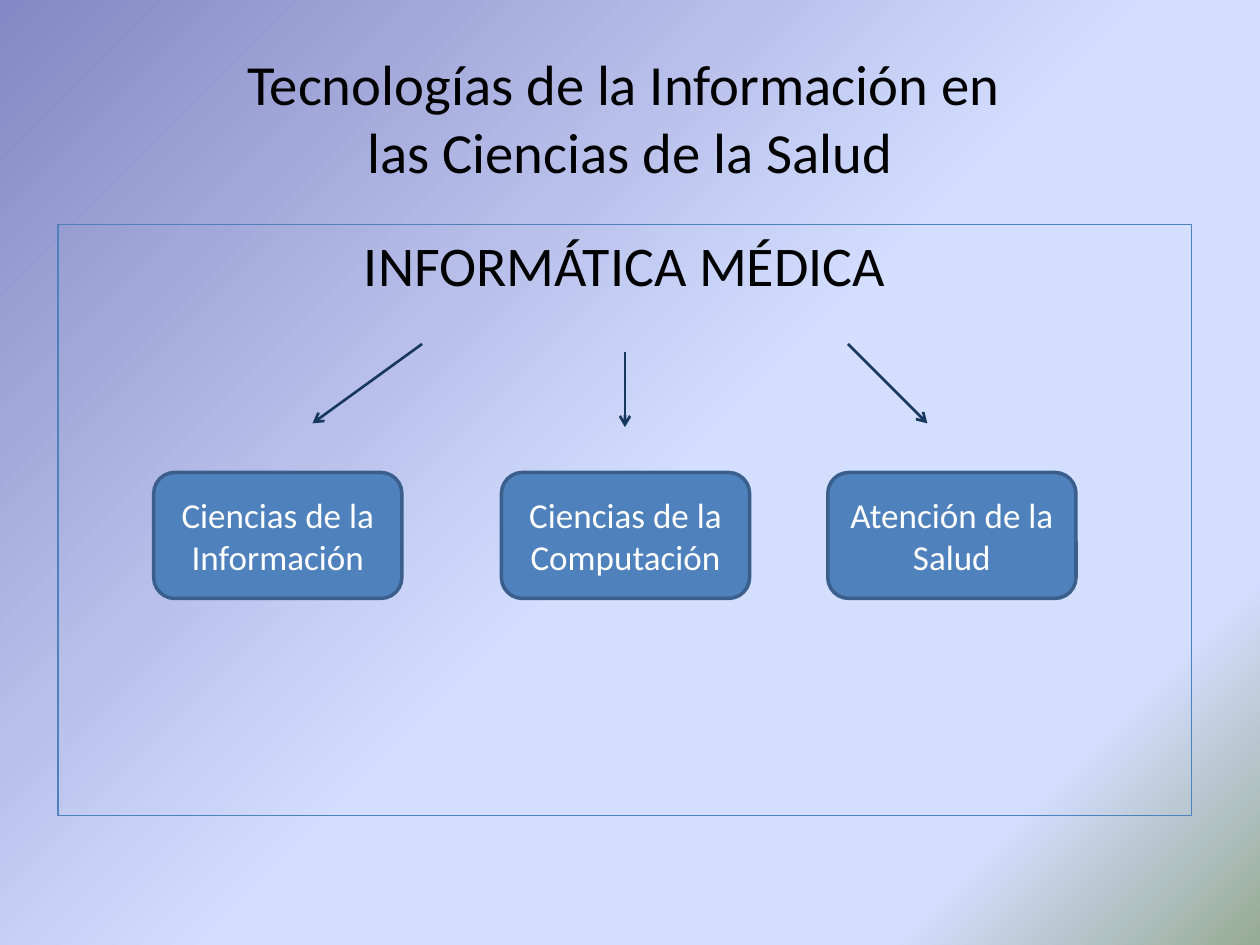
from lxml.etree import SubElement
from pptx import Presentation
from pptx.dml.color import RGBColor
from pptx.enum.shapes import MSO_CONNECTOR as Connector, MSO_SHAPE as Shape
from pptx.enum.text import MSO_ANCHOR as Anchor, PP_ALIGN as Align
from pptx.oxml.ns import qn
from pptx.util import Inches, Pt

WIDTH, HEIGHT = 10, 7.5
CARD_TOP, CARD_WIDTH, CARD_HEIGHT = 0.5 * HEIGHT, 1.97, 1
BLUE, EDGE, NAVY, BLACK, WHITE = "4F81BD", "3A5F8C", "17375E", "000000", "FFFFFF"
BACKDROP = [(0, "8488C4"), (53, "D4DEFF"), (83, "D4DEFF"), (100, "96AB94")]
CARDS = [
    (1.22, "Ciencias de la Información"),
    (3.98, "Ciencias de la Computación"),
    (6.57, "Atención de la Salud"),
]
ARROWS = [
    ((3.35, 2.73), (2.48, 3.36)),
    ((4.96, 2.79), (4.96, 3.39)),
    ((6.73, 2.73), (7.36, 3.36)),
]


def color(code):
    """Turn a hex string into a colour."""
    return RGBColor.from_string(code)


def paint_background(page, stops):
    """Fill the page with a diagonal gradient."""
    fill = page.background.fill
    fill.gradient()
    fill.gradient_angle = 315
    stop_list = page.element.find(".//" + qn("a:gsLst"))
    stop_list.clear()
    for share, code in stops:
        stop = SubElement(stop_list, qn("a:gs"), pos=str(share * 1000))
        SubElement(stop, qn("a:srgbClr"), val=code)


def write(box, text, size, code, anchor=Anchor.MIDDLE, before=0):
    """Write one centred paragraph in a box."""
    frame = box.text_frame
    for name, value in {"word_wrap": True, "vertical_anchor": anchor}.items():
        setattr(frame, name, value)
    para = frame.paragraphs[0]
    para.text = text
    for name, value in {"alignment": Align.CENTER, "space_before": Pt(before)}.items():
        setattr(para, name, value)
    for span in para.runs:
        for name, value in {"name": "Calibri", "size": Pt(size)}.items():
            setattr(span.font, name, value)
        span.font.color.rgb = color(code)


def add_box(page, kind, area, edge, weight, fill=None):
    """Add an outlined shape, hollow unless a fill is given."""
    box = page.shapes.add_shape(kind, *map(Inches, area))
    box.shadow.inherit = False
    box.line.color.rgb = color(edge)
    box.line.width = Pt(weight)
    if fill:
        box.fill.solid()
        box.fill.fore_color.rgb = color(fill)
    else:
        box.fill.background()
    return box


def add_arrow(page, start, end):
    """Add a straight arrow with an open head."""
    arrow = page.shapes.add_connector(Connector.STRAIGHT, *map(Inches, start + end))
    arrow.line.color.rgb = color(NAVY)
    arrow.line.width = Pt(1.5)
    SubElement(arrow.line._get_or_add_ln(), qn("a:tailEnd"), type="arrow")
    SubElement(arrow.element.spPr, qn("a:effectLst"))


def main():
    """Build the slide and save it."""
    deck = Presentation()
    deck.slide_width, deck.slide_height = Inches(WIDTH), Inches(HEIGHT)
    page = deck.slides.add_slide(deck.slide_layouts[6])
    paint_background(page, BACKDROP)

    title_area = (0.05 * WIDTH, 0.04 * HEIGHT, 0.9 * WIDTH, 1.25)
    title = page.shapes.add_textbox(*map(Inches, title_area))
    write(title, "Tecnologías de la Información en \vlas Ciencias de la Salud", 32.4, BLACK)

    panel = add_box(page, Shape.RECTANGLE, (0.46, 1.78, 0.9 * WIDTH, 4.69), BLUE, 0.75)
    write(panel, "INFORMÁTICA MÉDICA", 32, BLACK, Anchor.TOP, 6.4)

    for left, label in CARDS:
        area = (left, CARD_TOP, CARD_WIDTH, CARD_HEIGHT)
        card = add_box(page, Shape.ROUNDED_RECTANGLE, area, EDGE, 2, BLUE)
        write(card, label, 20, WHITE)
    for start, end in ARROWS:
        add_arrow(page, start, end)
    deck.save("out.pptx")


if __name__ == "__main__":
    main()
